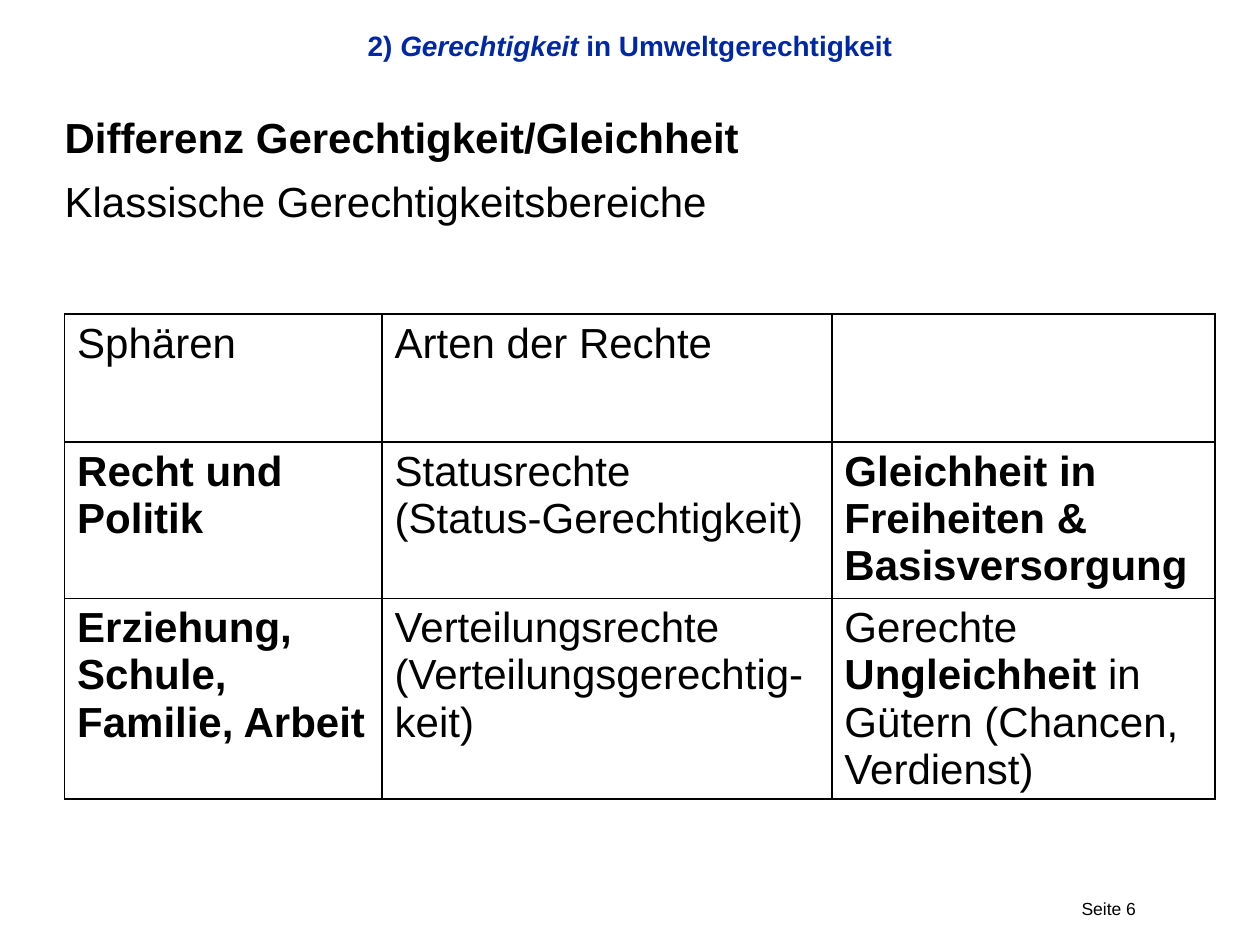
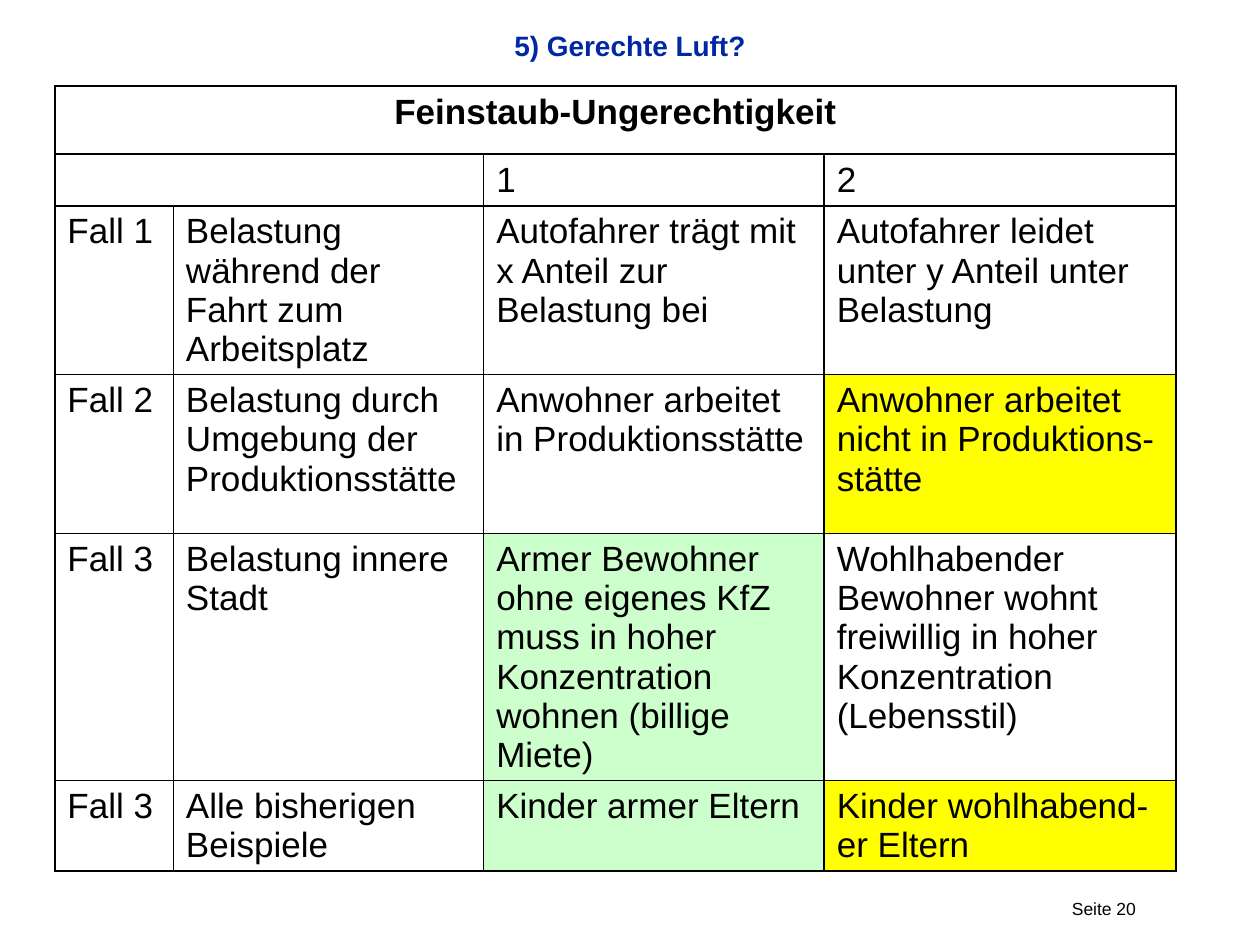
from collections import namedtuple

from lxml import etree
from pptx import Presentation
from pptx.dml.color import RGBColor
from pptx.enum.text import MSO_ANCHOR, PP_ALIGN
from pptx.oxml.ns import qn
from pptx.util import Inches, Pt

LEFT, CENTER, RIGHT = PP_ALIGN.LEFT, PP_ALIGN.CENTER, PP_ALIGN.RIGHT
TOP = MSO_ANCHOR.TOP

# The slide is a grid of 100 columns by 75 rows
SLIDE_WIDTH, SLIDE_HEIGHT = Inches(10), Inches(7.5)
UNIT = SLIDE_WIDTH // 100

FONT = "Arial"
LINE_PITCH = 1.12  # line height as a multiple of the font size
BLACK, BLUE, YELLOW, GREEN = "000000", "0028A5", "FFFF00", "CCFFCC"

Box = namedtuple("Box", "left top width height")
TITLE_BOX = Box(9.85, 2.05, 80.3, 7)
FOOTER_BOX = Box(81.45, 71.35, 8.7, 2.4)
BODY_BOX = Box(5.13, 9.1, 91.3, 12)
SPHERES_BOX = Box(5.13, 24.9, 91.3, 38.5)
DUST_BOX = Box(4.35, 6.84, 89, 62.3)

SPHERES = [
    ["Sphären", "Arten der Rechte", ""],
    ["*Recht und Politik*", "Statusrechte\n(Status-Gerechtigkeit)",
     "*Gleichheit in Freiheiten & Basisversorgung*"],
    ["*Erziehung, Schule, Familie, Arbeit*",
     "Verteilungsrechte\n(Verteilungsgerechtig-keit)",
     "Gerechte *Ungleichheit* in Gütern (Chancen, Verdienst)"],
]

DUST = [
    ["*Feinstaub-Ungerechtigkeit*", "", "", ""],
    ["", "", "1", "2"],
    ["Fall 1", "Belastung während der Fahrt zum Arbeitsplatz",
     "Autofahrer trägt mit x Anteil zur Belastung bei",
     "Autofahrer leidet unter y Anteil unter Belastung"],
    ["Fall 2", "Belastung durch Umgebung der Produktionsstätte",
     "Anwohner arbeitet in Produktionsstätte",
     "Anwohner arbeitet nicht in Produktions-stätte"],
    ["Fall 3", "Belastung innere Stadt",
     "Armer Bewohner ohne eigenes KfZ muss in hoher Konzentration wohnen "
     "(billige Miete)",
     "Wohlhabender Bewohner wohnt freiwillig in hoher Konzentration "
     "(Lebensstil)"],
    ["Fall 3", "Alle bisherigen Beispiele", "Kinder armer Eltern",
     "Kinder wohlhabend-er Eltern"],
]
DUST_FILLS = {(3, 3): YELLOW, (4, 2): GREEN, (5, 2): GREEN, (5, 3): YELLOW}


def color(hex_string):
    return RGBColor.from_string(hex_string)


def place(box):
    return [round(length * UNIT) for length in box]


def shares(total, weights):
    """Split a length in proportion to the weights."""
    return [round(total * weight / sum(weights)) for weight in weights]


def write(frame, text, size, ink=BLACK, align=LEFT, gap=0, bold=False):
    """One paragraph a line; *stars* mark bold, or italic in bold text."""
    for number, line in enumerate(text.split("\n")):
        para = frame.add_paragraph() if number else frame.paragraphs[0]
        para.alignment = align
        para.line_spacing = Pt(size * LINE_PITCH)
        if number and gap:
            para.space_before = Pt(gap)
        for part, words in enumerate(line.split("*")):
            if not words:
                continue
            span = para.add_run()
            span.text = words
            marked = part % 2 == 1
            span.font.name, span.font.size = FONT, Pt(size)
            span.font.bold = bold or marked
            span.font.italic = bold and marked
            span.font.color.rgb = color(ink)


def add_text(page, box, text, size, top_inset=0, **style):
    frame = page.shapes.add_textbox(*place(box)).text_frame
    frame.word_wrap = True
    frame.vertical_anchor = TOP
    frame.margin_left = frame.margin_right = frame.margin_bottom = 0
    frame.margin_top = Inches(top_inset)
    write(frame, text, size, **style)


def draw_borders(cell):
    properties = cell._tc.get_or_add_tcPr()
    for position, side in enumerate(("lnL", "lnR", "lnT", "lnB")):
        line = etree.Element(qn(f"a:{side}"), w=str(Pt(1)))
        fill = etree.SubElement(line, qn("a:solidFill"))
        etree.SubElement(fill, qn("a:srgbClr"), val=BLACK)
        properties.insert(position, line)


def add_grid(page, box, rows, widths, heights, size, fills):
    left, top, width, height = place(box)
    table = page.shapes.add_table(
        len(rows), len(widths), left, top, width, height).table
    table.first_row = table.horz_banding = False
    for column, share in zip(table.columns, shares(width, widths)):
        column.width = share
    for row, share in zip(table.rows, shares(height, heights)):
        row.height = share
    for r, texts in enumerate(rows):
        for c, text in enumerate(texts):
            cell = table.cell(r, c)
            cell.margin_bottom = Inches(0.02)
            write(cell.text_frame, text, size)
            if (r, c) in fills:
                cell.fill.solid()
                cell.fill.fore_color.rgb = color(fills[r, c])
            else:
                cell.fill.background()
            draw_borders(cell)
    return table


def add_page(deck, title, number):
    """Blank page with the shared title and page number."""
    page = deck.slides.add_slide(deck.slide_layouts[6])
    add_text(page, FOOTER_BOX, f"Seite {number}", 10, align=RIGHT)
    add_text(page, TITLE_BOX, title, 16, top_inset=0.04, ink=BLUE,
             align=CENTER, bold=True)
    return page


def build_spheres(deck):
    page = add_page(deck, "2) *Gerechtigkeit* in Umweltgerechtigkeit", 6)
    add_text(page, BODY_BOX, "*Differenz Gerechtigkeit/Gleichheit*\n"
             "Klassische Gerechtigkeitsbereiche", 24, gap=9.6)
    add_grid(page, SPHERES_BOX, SPHERES, widths=[2.52, 3.57, 3.04],
             heights=[1.02, 1.24, 1.59], size=24, fills={})


def build_dust(deck):
    page = add_page(deck, "5) Gerechte Luft?", 20)
    table = add_grid(page, DUST_BOX, DUST, widths=[0.94, 2.46, 2.7, 2.79],
                     heights=[0.54, 0.41, 1.34, 1.26, 1.96, 0.72], size=20,
                     fills=DUST_FILLS)
    # Heading across the table, empty corner over the case columns
    heading = table.cell(0, 0)
    heading.merge(table.cell(0, 3))
    heading.text_frame.paragraphs[0].alignment = CENTER
    table.cell(1, 0).merge(table.cell(1, 1))


def main():
    deck = Presentation()
    deck.slide_width, deck.slide_height = SLIDE_WIDTH, SLIDE_HEIGHT
    build_spheres(deck)
    build_dust(deck)
    deck.save("out.pptx")


if __name__ == "__main__":
    main()
